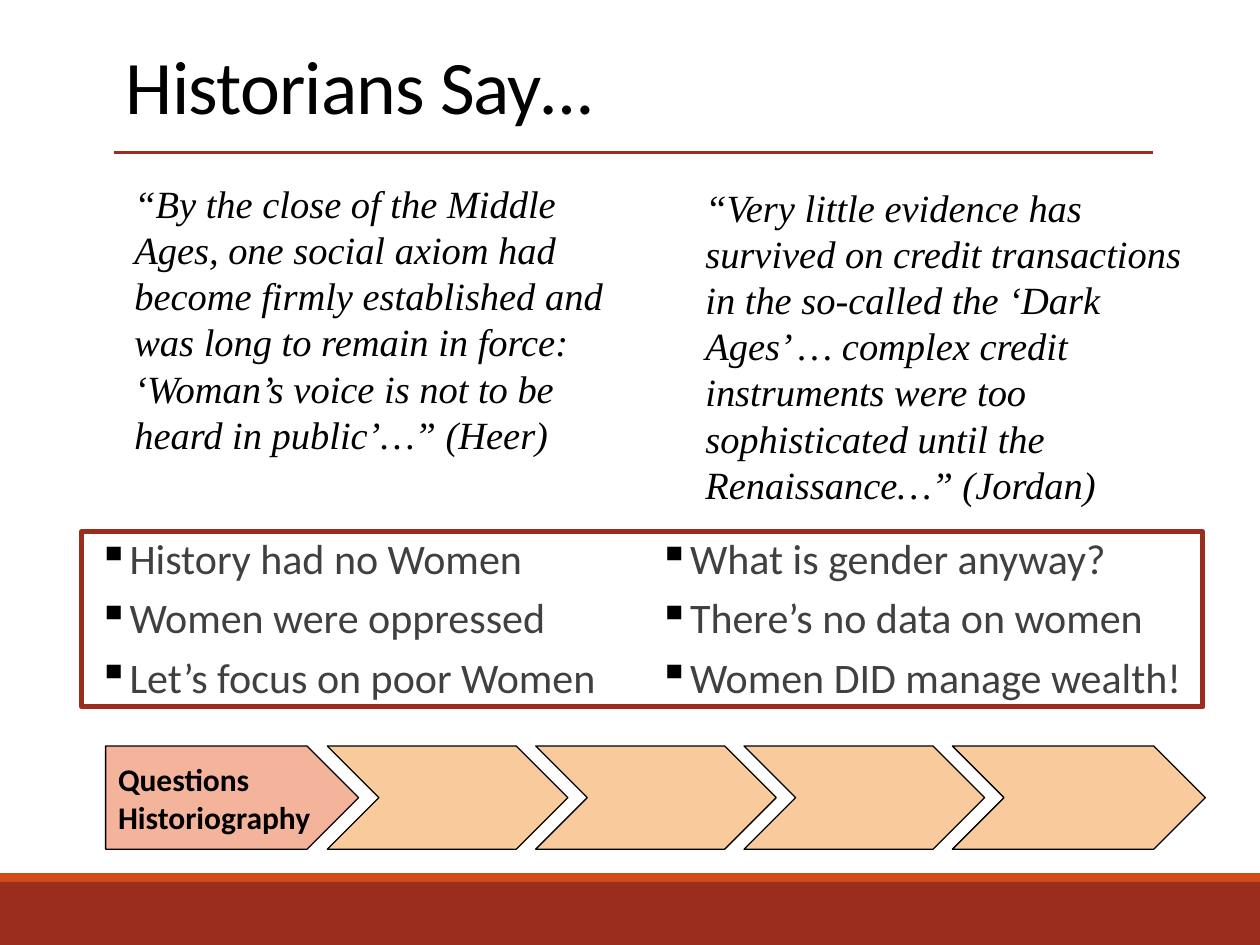
"""Build the Historians Say slide with quotations, discussion points and a progress arrow."""
from lxml.etree import SubElement
from pptx import Presentation
from pptx.dml.color import RGBColor
from pptx.enum.shapes import MSO_CONNECTOR, MSO_SHAPE
from pptx.enum.text import MSO_ANCHOR, PP_ALIGN
from pptx.oxml.ns import qn
from pptx.util import Cm, Pt

RUST = RGBColor(0x9B, 0x2D, 0x1F)
ORANGE = RGBColor(0xD3, 0x48, 0x17)
SALMON = RGBColor(0xF4, 0xB3, 0x9B)
PEACH = RGBColor(0xF9, 0xCB, 0x9C)
BLACK = RGBColor(0, 0, 0)
GREY = RGBColor(0x40, 0x40, 0x40)


def add_box(kind, x, y, w, h, fill=None, line=None, width=0.75):
    sp = s.shapes.add_shape(kind, Cm(x), Cm(y), Cm(w), Cm(h))
    sp.shadow.inherit = False
    if fill is None:
        sp.fill.background()
    else:
        sp.fill.solid()
        sp.fill.fore_color.rgb = fill
    if line is None:
        sp.line.fill.background()
    else:
        sp.line.color.rgb = line
        sp.line.width = Pt(width)
    return sp


def add_run(p, text, size, color=BLACK, name="Calibri", bold=False, italic=False):
    r = p.add_run()
    r.text = text
    r.font.name = name
    r.font.size = Pt(size)
    r.font.color.rgb = color
    r.font.bold = bold
    r.font.italic = italic
    return r


prs = Presentation()
prs.slide_width, prs.slide_height = Cm(25.4), Cm(19.05)
s = prs.slides.add_slide(prs.slide_layouts[6])

add_box(MSO_SHAPE.RECTANGLE, 0, 17.78, 25.4, 1.27, RUST)
add_box(MSO_SHAPE.RECTANGLE, 0, 17.6, 25.4, 0.18, ORANGE)
rule = s.shapes.add_connector(MSO_CONNECTOR.STRAIGHT, Cm(2.29), Cm(3.07), Cm(23.24), Cm(3.07))
rule.line.color.rgb = RUST
rule.line.width = Pt(2)
SubElement(rule._element.spPr, qn("a:effectLst"))

tf = s.shapes.add_textbox(Cm(2.29), Cm(0.79), Cm(20.95), Cm(1.96)).text_frame
tf.word_wrap = True
tf.vertical_anchor = MSO_ANCHOR.BOTTOM
p = tf.paragraphs[0]
p.line_spacing = 0.85
for text, italic in (("Historians Say", False), ("…", True)):
    r = add_run(p, text, 43.2, italic=italic)
    r.font._element.set("spc", "-50")

quotes = [
    (2.46, 3.5, 5.9, "“By the close of the Middle Ages, one social axiom had become firmly established "
     "and was long to remain in force: ‘Woman’s voice is not to be heard in public’…” (Heer)"),
    (13.97, 3.58, 6.83, "“Very little evidence has survived on credit transactions in the so-called the "
     "‘Dark Ages’ … complex credit instruments were too sophisticated until the Renaissance…” (Jordan)"),
]
for x, y, h, text in quotes:
    tf = s.shapes.add_textbox(Cm(x), Cm(y), Cm(10.29), Cm(h)).text_frame
    tf.word_wrap = True
    add_run(tf.paragraphs[0], text, 22, name="Times New Roman", italic=True)

add_box(MSO_SHAPE.RECTANGLE, 1.65, 10.72, 22.6, 3.53, line=RUST, width=3)
columns = [
    ("History had no Women", "Women were oppressed", "Let’s focus on poor Women"),
    ("What is gender anyway?", "There’s no data on women", "Women DID manage wealth!"),
]
for i, points in enumerate(columns):
    tf = s.shapes.add_textbox(Cm(1.65 + i * 11.3), Cm(10.72), Cm(11.3), Cm(3.53)).text_frame
    tf.word_wrap = True
    tf.margin_left = tf.margin_right = 0
    for j, text in enumerate(points):
        p = tf.add_paragraph() if j else tf.paragraphs[0]
        p.line_spacing = 0.9
        p.space_before = Pt(6 if j else 0)
        p.space_after = Pt(2)
        pPr = p._p.get_or_add_pPr()
        pPr.set("marL", str(Cm(0.81)))
        pPr.set("indent", str(-Cm(0.48)))
        color = SubElement(pPr, qn("a:buClr"))
        SubElement(color, qn("a:srgbClr"), val=str(BLACK))
        SubElement(pPr, qn("a:buChar"), char="▪")
        add_run(p, text, 24, GREY)

sp = add_box(MSO_SHAPE.PENTAGON, 2.13, 15.04, 5.1, 2.08, SALMON, BLACK)
tf = sp.text_frame
tf.word_wrap = False
tf.vertical_anchor = MSO_ANCHOR.MIDDLE
tf.margin_left = tf.margin_right = tf.margin_top = tf.margin_bottom = Cm(0.25)
p = tf.paragraphs[0]
p.alignment = PP_ALIGN.LEFT
add_run(p, "Questions", 18, bold=True)
p.add_line_break()
add_run(p, "Historiography", 18, bold=True)

for i in range(4):
    add_box(MSO_SHAPE.CHEVRON, 6.6 + i * 4.2, 15.04, 5.1 if i == 3 else 4.85, 2.08, PEACH, BLACK)

prs.save("out.pptx")
